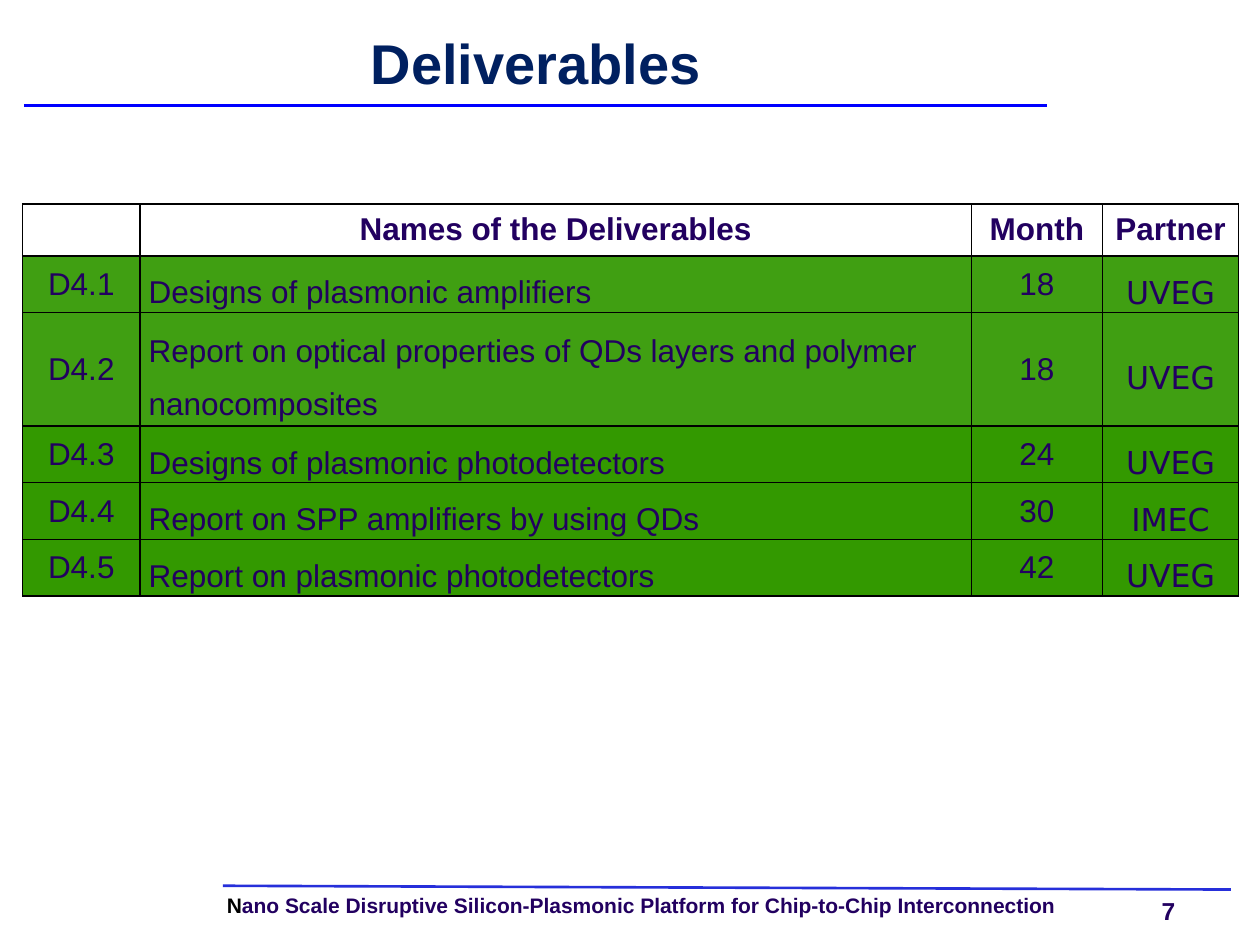
from dataclasses import dataclass

from lxml.etree import SubElement
from pptx import Presentation
from pptx.dml.color import RGBColor
from pptx.enum.shapes import MSO_CONNECTOR
from pptx.enum.text import MSO_ANCHOR, MSO_AUTO_SIZE, PP_ALIGN
from pptx.oxml import parse_xml
from pptx.oxml.ns import nsdecls, qn
from pptx.util import Inches, Pt

INK, NAVY, BLACK = "220060", "002060", "000000"
LIGHT_GREEN, GREEN = "409F12", "339900"
HEADER = ("", "Names of the Deliverables", "Month", "Partner")
COL_WIDTHS = (0.93, 6.6, 1.04, 1.08)
ROW_HEIGHT = 0.41
NAME_COL, PARTNER_COL = 1, 3


@dataclass
class Deliverable:
    code: str
    name: str
    month: str
    partner: str
    fill: str


@dataclass
class Rule:
    start: tuple[float, float]
    end: tuple[float, float]
    color: str


DELIVERABLES = (
    Deliverable("D4.1", "Designs of plasmonic amplifiers", "18", "UVEG", LIGHT_GREEN),
    Deliverable("D4.2", "Report on optical properties of QDs layers and polymer nanocomposites",
                "18", "UVEG", LIGHT_GREEN),
    Deliverable("D4.3", "Designs of plasmonic photodetectors", "24", "UVEG", GREEN),
    Deliverable("D4.4", "Report on SPP amplifiers by using QDs", "30", "IMEC", GREEN),
    Deliverable("D4.5", "Report on plasmonic photodetectors", "42", "UVEG", GREEN),
)
RULES = (
    Rule((1.77, 7.03), (9.77, 7.06), "262FDA"),
    Rule((0.19, 0.84), (8.31, 0.84), "0000FF"),
)


def rgb(color: str) -> RGBColor:
    return RGBColor.from_string(color)


def add_run(p, text: str, size: float, color: str = INK, bold: bool = True,
            font: str = "Arial") -> None:
    r = p.add_run()
    r.text = text
    r.font.size, r.font.bold, r.font.name = Pt(size), bold, font
    r.font.color.rgb = rgb(color)


def clear_margins(tf) -> None:
    tf.margin_left = tf.margin_top = tf.margin_right = tf.margin_bottom = 0


def add_rule(slide, rule: Rule) -> None:
    line = slide.shapes.add_connector(
        MSO_CONNECTOR.STRAIGHT, *map(Inches, rule.start + rule.end))
    line.line.color.rgb = rgb(rule.color)
    line.line.width = Pt(1.5)
    SubElement(line._element.spPr, qn("a:effectLst"))


def add_label(slide, left: float, width: float, height: float, wrap: bool = True):
    """Add a footer text box and return its paragraph."""
    sp = slide.shapes.add_textbox(*map(Inches, (left, 7.11, width, height)))
    tf = sp.text_frame
    tf.word_wrap = wrap
    clear_margins(tf)
    return tf.paragraphs[0]


def set_title(slide, text: str) -> None:
    title = slide.shapes.title
    title.left, title.top, title.width, title.height = map(Inches, (0.2, 0.2, 8.11, 0.67))
    tf = title.text_frame
    tf.auto_size = MSO_AUTO_SIZE.NONE
    tf.vertical_anchor = MSO_ANCHOR.MIDDLE
    clear_margins(tf)
    p = tf.paragraphs[0]
    p.alignment = PP_ALIGN.CENTER
    p.line_spacing = Pt(32)
    add_run(p, text, 32, NAVY)


def set_borders(cell) -> None:
    tc_pr = cell._tc.get_or_add_tcPr()
    for i, side in enumerate("LRTB"):
        tc_pr.insert(i, parse_xml(
            f'<a:ln{side} {nsdecls("a")} w="12700"><a:solidFill>'
            f'<a:srgbClr val="{BLACK}"/></a:solidFill></a:ln{side}>'))


def fill_cell(cell, text: str, col: int, fill: str | None = None) -> None:
    """Format a cell; one without a fill belongs to the header row."""
    header = fill is None
    cell.vertical_anchor = MSO_ANCHOR.MIDDLE
    p = cell.text_frame.paragraphs[0]
    p.alignment = PP_ALIGN.CENTER
    if header:
        cell.fill.background()
    else:
        cell.fill.solid()
        cell.fill.fore_color.rgb = rgb(fill)
        if col in (NAME_COL, PARTNER_COL):
            cell.margin_left = cell.margin_right = Inches(0.07)
            cell.margin_top = cell.margin_bottom = 0
            p.line_spacing = 1.5
        if col == NAME_COL:
            p.alignment = PP_ALIGN.LEFT
    set_borders(cell)
    if text:
        font = "DejaVu Sans" if col == PARTNER_COL and not header else "Arial"
        add_run(p, text, 18, bold=header, font=font)


def add_deliverables(slide) -> None:
    n_rows = len(DELIVERABLES) + 1
    table = slide.shapes.add_table(
        n_rows, len(HEADER), Inches(0.18), Inches(1.62),
        Inches(sum(COL_WIDTHS)), Inches(ROW_HEIGHT * n_rows)).table
    table.first_row = table.horz_banding = False
    for column, width in zip(table.columns, COL_WIDTHS):
        column.width = Inches(width)
    for row in table.rows:
        row.height = Inches(ROW_HEIGHT)
    for col, text in enumerate(HEADER):
        fill_cell(table.cell(0, col), text, col)
    for row, d in enumerate(DELIVERABLES, start=1):
        for col, text in enumerate((d.code, d.name, d.month, d.partner)):
            fill_cell(table.cell(row, col), text, col, d.fill)


def main() -> None:
    prs = Presentation()
    prs.slide_width, prs.slide_height = Inches(10), Inches(7.5)
    slide = prs.slides.add_slide(prs.slide_layouts[5])

    project = add_label(slide, 1.8, 7.14, 0.18)
    project.line_spacing = 0.9
    add_run(project, "N", 12, BLACK)
    add_run(project, "ano Scale Disruptive Silicon-Plasmonic Platform "
                     "for Chip-to-Chip Interconnection", 12)
    add_run(add_label(slide, 9.22, 0.4, 0.23, wrap=False), "7", 14)

    for rule in RULES:
        add_rule(slide, rule)
    set_title(slide, "Deliverables")
    add_deliverables(slide)
    prs.save("out.pptx")


if __name__ == "__main__":
    main()
